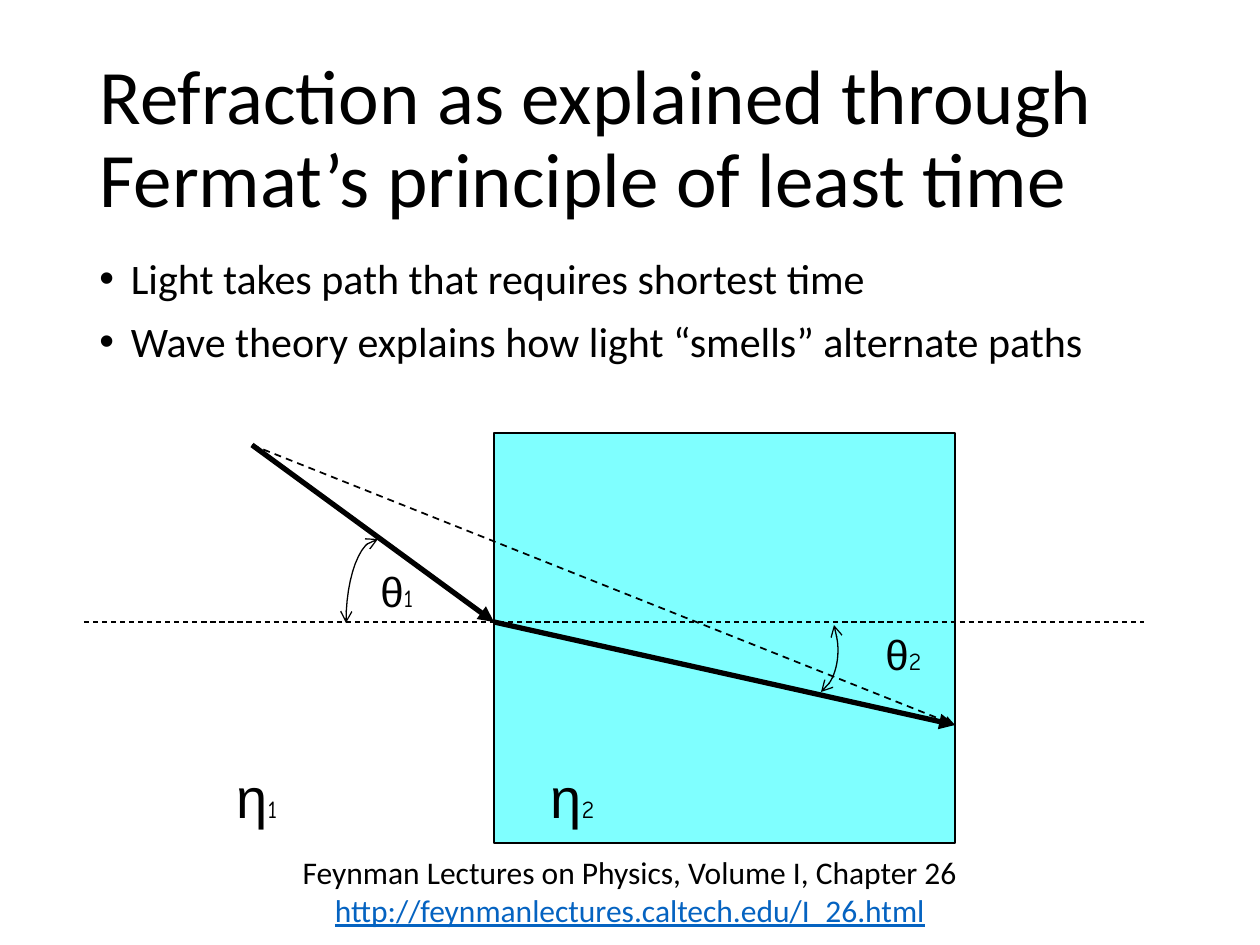
from pptx import Presentation
from pptx import util as u
from pptx.dml.color import RGBColor
from pptx.enum import dml, shapes, text
from pptx.oxml import ns
from lxml import etree

PX = 914400 / 126
BLACK = "000000"
LINK = "0563C1"
GLASS = "00FFFF"


def px(length):
    return u.Emu(round(length * PX))


def color(value):
    return RGBColor.from_string(value)


def add_element(parent, tag, **attributes):
    return etree.SubElement(parent, ns.qn(tag), attributes)


def add_run(paragraph, words, size, font="Calibri", fill=BLACK, underline=None):
    run = paragraph.add_run()
    run.text = words
    run.font.size = u.Pt(size)
    run.font.name = font
    run.font.color.rgb = color(fill)
    run.font.underline = underline


def add_text_frame(slide, box, wrap=True):
    frame = slide.shapes.add_textbox(*map(px, box)).text_frame
    frame.word_wrap = wrap
    return frame


def style_line(shape, width, dashed=False, head=None, tail=None):
    line = shape.line
    line.color.rgb = color(BLACK)
    line.width = u.Pt(width)
    if dashed:
        line.dash_style = dml.MSO_LINE.DASH
    outline = shape._element.spPr.find(ns.qn("a:ln"))
    for tag, kind in (("a:headEnd", head), ("a:tailEnd", tail)):
        if kind:
            add_element(outline, tag, type=kind)


def add_line(slide, start, end, width, dashed=False, tail=None):
    line = slide.shapes.add_connector(
        shapes.MSO_CONNECTOR.STRAIGHT, *map(px, (*start, *end)))
    style_line(line, width, dashed, tail=tail)
    add_element(line._element.spPr, "a:effectLst")


def bezier_points(start, first, second, end, steps=12):
    for step in range(1, steps + 1):
        t = step / steps
        weights = ((1 - t) ** 3, 3 * t * (1 - t) ** 2, 3 * t * t * (1 - t), t ** 3)
        yield tuple(
            round(sum(w * v for w, v in zip(weights, values)) * PX)
            for values in zip(start, first, second, end))


def add_angle_arc(slide, left, top, start, curves):
    start = (left + start[0], top + start[1])
    builder = slide.shapes.build_freeform(px(start[0]), px(start[1]))
    for curve in curves:
        controls = [(left + x, top + y) for x, y in curve]
        builder.add_line_segments(bezier_points(start, *controls), close=False)
        start = controls[-1]
    arc = builder.convert_to_shape()
    arc.shadow.inherit = False
    arc.fill.background()
    style_line(arc, 0.75, head="arrow", tail="arrow")


def add_symbol(slide, box, letter, index, size):
    paragraph = add_text_frame(slide, box, wrap=False).paragraphs[0]
    add_run(paragraph, letter, size, "Arial")
    add_run(paragraph, index, 14, "Comic Neue")


def add_title(slide, box, words):
    title = slide.shapes.title
    title.left, title.top, title.width, title.height = map(px, box)
    frame = title.text_frame
    frame.vertical_anchor = text.MSO_ANCHOR.MIDDLE
    paragraph = frame.paragraphs[0]
    paragraph.alignment = text.PP_ALIGN.LEFT
    paragraph.line_spacing = 0.9
    add_run(paragraph, words, 44)


def add_bullets(slide, box, items):
    frame = add_text_frame(slide, box)
    for number, item in enumerate(items):
        paragraph = frame.add_paragraph() if number else frame.paragraphs[0]
        properties = paragraph._p.get_or_add_pPr()
        properties.set("marL", str(u.Inches(0.25)))
        properties.set("indent", str(-u.Inches(0.25)))
        add_element(properties, "a:buFont", typeface="Arial")
        add_element(properties, "a:buChar", char="•")
        paragraph.line_spacing = 0.9
        paragraph.space_before = u.Pt(10 if number else 0)
        add_run(paragraph, item, 24)


def add_glass(slide, box):
    glass = slide.shapes.add_shape(shapes.MSO_SHAPE.RECTANGLE, *map(px, box))
    glass.shadow.inherit = False
    glass.fill.solid()
    glass.fill.fore_color.rgb = color(GLASS)
    fill = glass._element.spPr.find(ns.qn("a:solidFill"))
    add_element(fill[0], "a:alpha", val="50000")
    style_line(glass, 0.75)


def add_refraction(slide, left, top, width, height):
    glass_left, glass_width = left + 410, 461
    axis = top + 189
    source = (left + 168, top + 12)
    entry = (glass_left, axis)
    target = (glass_left + glass_width, top + 292)

    add_glass(slide, (glass_left, top, glass_width, height))
    add_symbol(slide, (left + 140, top + 323, 71, 79), "η", "1", 32)
    add_symbol(slide, (left + 454, top + 323, 74, 79), "η", "2", 32)
    add_symbol(slide, (left + 284, top + 126, 58, 63), "θ", "1", 24)
    add_symbol(slide, (left + 789, top + 189, 62, 63), "θ", "2", 24)
    add_line(slide, source, entry, 3, tail="triangle")
    add_angle_arc(slide, left + 262, top + 106, (32, 0),
                  [((14, 0), (0, 38), (0, 84))])
    add_angle_arc(slide, left + 737, top + 192, (13, 0),
                  [((15, 8), (17, 16), (17, 25)), ((17, 43), (11, 59), (0, 67))])
    add_line(slide, (left, axis), (left + width, axis), 0.75, dashed=True)
    add_line(slide, entry, target, 3, tail="triangle")
    add_line(slide, source, target, 1, dashed=True, tail="triangle")


def add_reference(slide, box, citation, address):
    frame = add_text_frame(slide, box)
    first, second = frame.paragraphs[0], frame.add_paragraph()
    first.alignment = second.alignment = text.PP_ALIGN.CENTER
    add_run(first, citation, 18)
    add_run(second, address, 18, fill=LINK, underline=True)


def main():
    presentation = Presentation()
    presentation.slide_width = px(1260)
    presentation.slide_height = px(945)
    slide = presentation.slides.add_slide(presentation.slide_layouts[5])
    add_title(slide, (87, 50, 1086, 183),
              "Refraction as explained through Fermat’s principle of least time")
    add_bullets(slide, (87, 252, 1086, 600), (
        "Light takes path that requires shortest time",
        "Wave theory explains how light “smells” alternate paths"))
    add_refraction(slide, 84, 433, 1060, 410)
    add_reference(slide, (286, 847, 688, 89),
                  "Feynman Lectures on Physics, Volume I, Chapter 26",
                  "http://feynmanlectures.caltech.edu/I_26.html")
    presentation.save("out.pptx")


if __name__ == "__main__":
    main()
